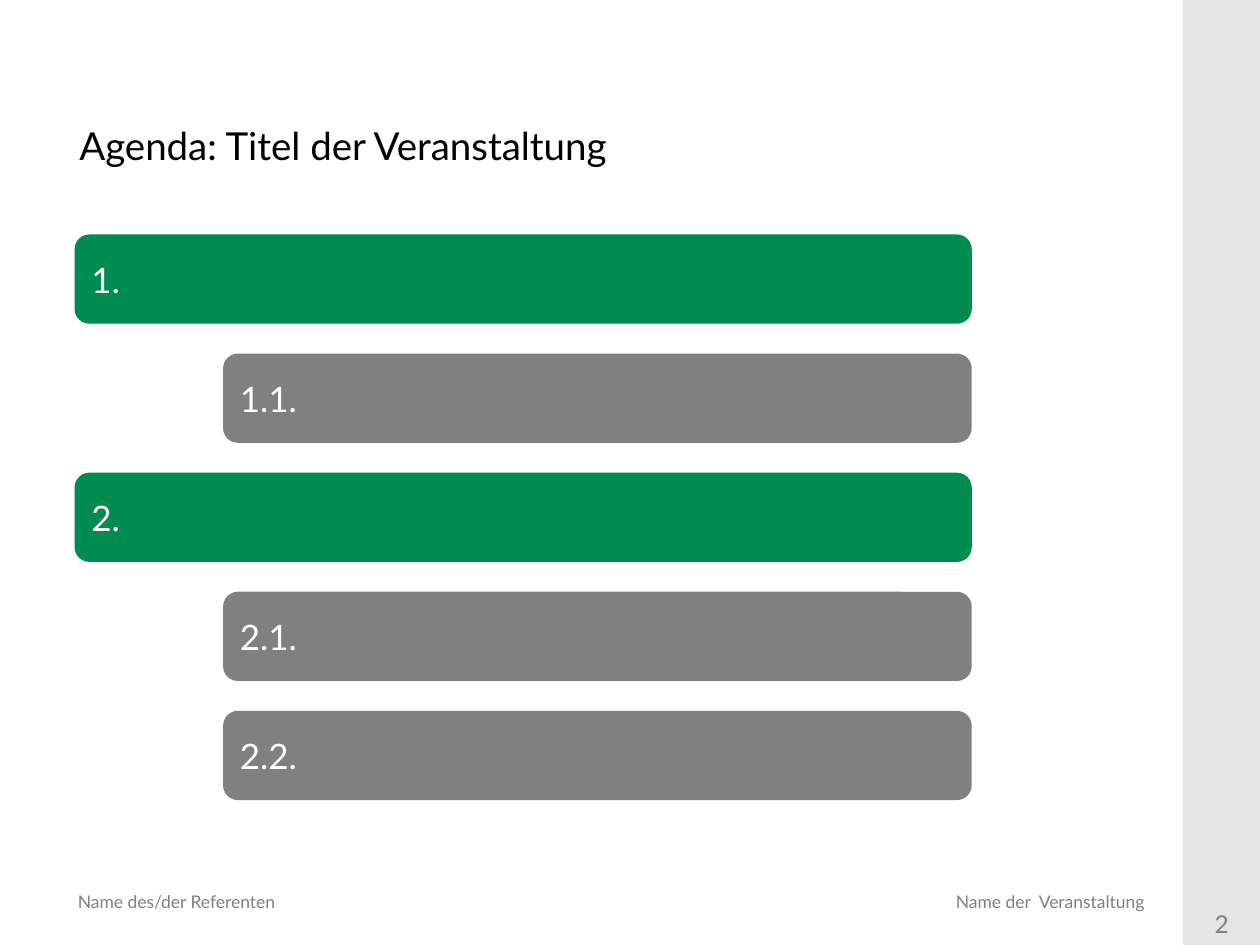
from lxml.etree import SubElement
from pptx import Presentation
from pptx.dml.color import RGBColor
from pptx.enum.shapes import MSO_SHAPE as Shape
from pptx.enum.text import MSO_ANCHOR as Anchor, PP_ALIGN as Align
from pptx.oxml.ns import qn
from pptx.util import Pt

BLACK = RGBColor(0x00, 0x00, 0x00)
WHITE = RGBColor(0xFF, 0xFF, 0xFF)
GREEN = RGBColor(0x00, 0x8C, 0x4F)
GRAY = RGBColor(0x80, 0x80, 0x80)


def write(shape, text, size, color, align=Align.LEFT, anchor=Anchor.TOP):
    frame = shape.text_frame
    frame.word_wrap = True
    frame.vertical_anchor = anchor
    para = frame.paragraphs[0]
    para.alignment = align
    span = para.add_run()
    span.text = text
    span.font.color.rgb = color
    for name, value in {"name": "Lato", "size": Pt(size)}.items():
        setattr(span.font, name, value)


def add_block(page, kind, left, top, width, height, color):
    block = page.shapes.add_shape(kind, Pt(left), Pt(top), Pt(width), Pt(height))
    block.shadow.inherit = False
    block.fill.solid()
    block.fill.fore_color.rgb = color
    block.line.fill.background()
    return block


deck = Presentation()
deck.slide_width, deck.slide_height = Pt(720), Pt(540)
page = deck.slides.add_slide(deck.slide_layouts[6])

sidebar = add_block(page, Shape.RECTANGLE, 676, 0, 44, 540, BLACK)
sidebar_color = sidebar.fill._xPr.find(qn("a:solidFill"))[0]
SubElement(sidebar_color, qn("a:alpha"), val="10000")

labels = [
    ("Name des/der Referenten", 37.4, 505.4, 306, 19.4, 10, GRAY, Align.LEFT),
    ("2", 675.4, 516.2, 45.4, 23.8, 14, GRAY, Align.CENTER),
    ("Name der  Veranstaltung", 349.2, 505.4, 311.8, 19.4, 10, GRAY, Align.RIGHT),
    ("Agenda: Titel der Veranstaltung", 38.2, 66.2, 622, 45.4, 22, BLACK, Align.LEFT),
]
for text, left, top, width, height, size, color, align in labels:
    box = page.shapes.add_textbox(Pt(left), Pt(top), Pt(width), Pt(height))
    write(box, text, size, color, align)

FIRST_TOP, ROW_STEP, BAR_HEIGHT, BAR_RIGHT = 134, 68.05, 51, 555.3
LEVELS = {1: (42.6, GREEN), 2: (127.5, GRAY)}
for row, number in enumerate(["1.", "1.1.", "2.", "2.1.", "2.2."]):
    left, color = LEVELS[number.count(".")]
    top = FIRST_TOP + row * ROW_STEP
    bar = add_block(page, Shape.ROUNDED_RECTANGLE, left, top, BAR_RIGHT - left, BAR_HEIGHT, color)
    write(bar, number, 20, WHITE, anchor=Anchor.MIDDLE)

deck.save("out.pptx")
